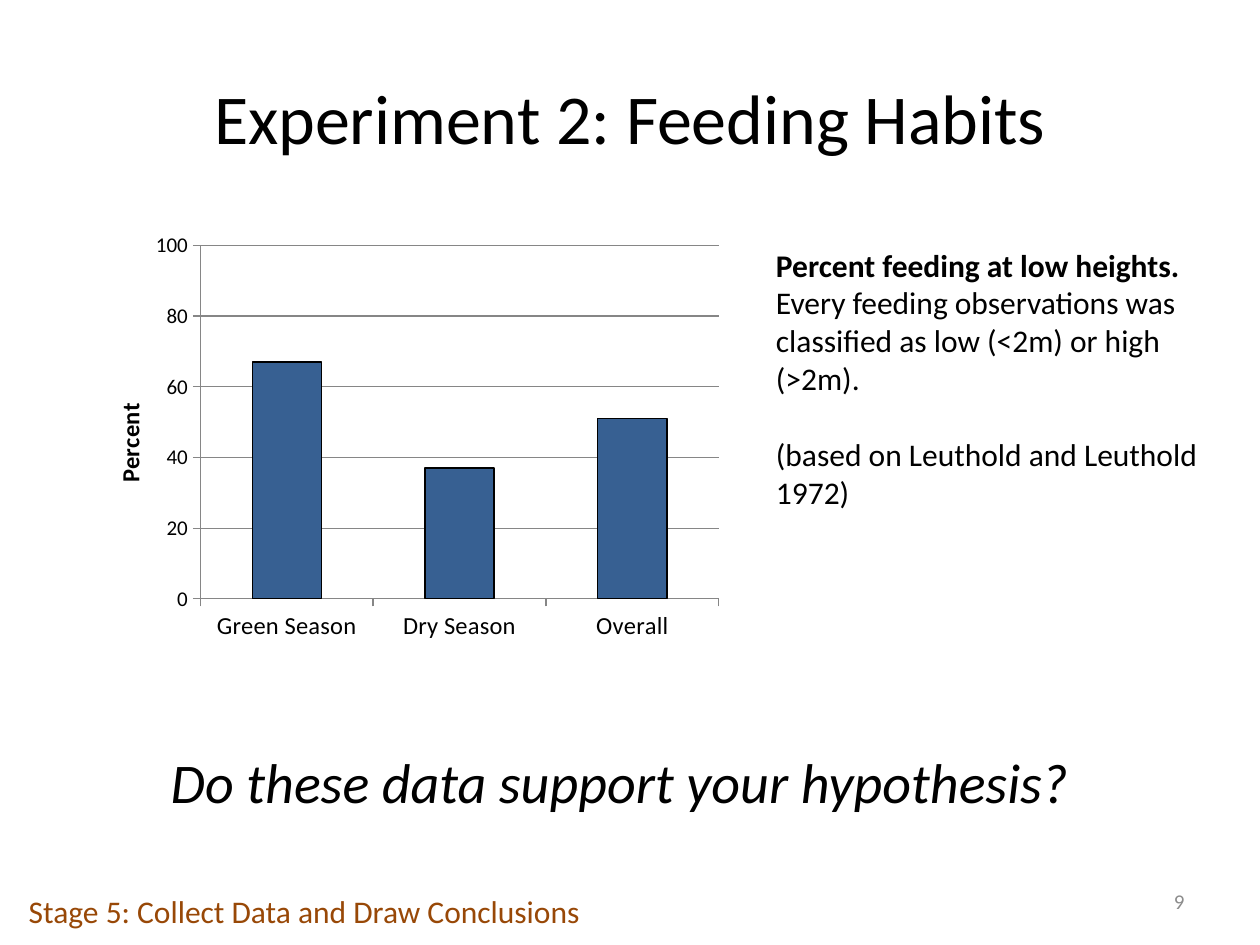
import pptx
import pptx.util
import pptx.dml.color
import pptx.enum.text
import pptx.enum.chart
import pptx.chart.data
import pptx.oxml
import pptx.oxml.ns

Inches = pptx.util.Inches
Pt = pptx.util.Pt
Color = pptx.dml.color.RGBColor
Align = pptx.enum.text.PP_ALIGN
Anchor = pptx.enum.text.MSO_ANCHOR

BLACK = Color(0x00, 0x00, 0x00)
BLUE = Color(0x37, 0x60, 0x92)
BROWN = Color(0x98, 0x48, 0x07)
GRAY = Color(0x8C, 0x8C, 0x8C)
RULE = Color(0x86, 0x86, 0x86)
FACE = "Calibri"


def set_font(font, size, color=BLACK, bold=False, italic=False):
    """Set the face, size, colour and style of a font."""
    font.name = FACE
    font.size = Pt(size)
    font.bold = bold
    font.italic = italic
    font.color.rgb = color


def add_text(slide, box, text, align=Align.LEFT, anchor=Anchor.TOP, gap=0, **style):
    """Place paragraphs of text in a box; a paragraph may be a list of (text, bold)."""
    frame = slide.shapes.add_textbox(*map(Inches, box)).text_frame
    frame.word_wrap = True
    frame.vertical_anchor = anchor
    paras = [text] if isinstance(text, str) else text
    for num, runs in enumerate(paras):
        para = frame.add_paragraph() if num else frame.paragraphs[0]
        para.alignment = align
        if num:
            para.space_before = Pt(gap)
        for words, bold in [(runs, False)] if isinstance(runs, str) else runs:
            run = para.add_run()
            run.text = words
            set_font(run.font, bold=bold, **style)


def set_layout(node, index, **parts):
    """Give a chart part a manual layout in fractions of the chart."""
    for old in node.findall(pptx.oxml.ns.qn("c:layout")):
        node.remove(old)
    tags = "".join(f'<c:{tag} val="{val}"/>' for tag, val in parts.items())
    node.insert(index, pptx.oxml.parse_xml(
        f'<c:layout {pptx.oxml.ns.nsdecls("c")}>'
        f"<c:manualLayout>{tags}</c:manualLayout></c:layout>"))


def add_bars(slide, box):
    """Draw the column chart of low feeding by season."""
    data = pptx.chart.data.CategoryChartData()
    data.categories = ["Green Season", "Dry Season", "Overall"]
    data.add_series("Series 1", [67, 37, 51])
    kind = pptx.enum.chart.XL_CHART_TYPE.COLUMN_CLUSTERED
    chart = slide.shapes.add_chart(kind, *map(Inches, box), data).chart
    chart.has_legend = False
    chart.has_title = False
    set_font(chart.font, 10)

    plot = chart.plots[0]
    plot.gap_width = 150
    plot.vary_by_categories = False
    bars = plot.series[0].format
    bars.fill.solid()
    bars.fill.fore_color.rgb = BLUE
    bars.line.color.rgb = BLACK
    bars.line.width = Pt(0.75)

    value = chart.value_axis
    value.minimum_scale = 0
    value.maximum_scale = 100
    value.major_unit = 20
    value.has_major_gridlines = True
    for axis, size in ((chart.category_axis, 14), (value, 12)):
        set_font(axis.tick_labels.font, size)
        axis.major_tick_mark = pptx.enum.chart.XL_TICK_MARK.OUTSIDE
        axis.format.line.color.rgb = RULE
        axis.format.line.width = Pt(0.75)
    grid = value.major_gridlines.format.line
    grid.color.rgb = RULE
    grid.width = Pt(0.75)

    title = value.axis_title
    run = title.text_frame.paragraphs[0].add_run()
    run.text = "Percent"
    set_font(run.font, 14, bold=True)
    set_layout(title._element, 1, xMode="edge", yMode="edge", x=0.05, y=0.41)
    area = chart._chartSpace.chart.plotArea
    set_layout(area, 0, layoutTarget="inner", xMode="edge", yMode="edge",
               x=0.19, y=0.05, w=0.79, h=0.83)


def add_note(slide, box):
    """Explain the measure beside the chart."""
    add_text(slide, box, [
        [("Percent feeding at low heights.", True),
         (" Every feeding observations was classified as low (<2m) or high (>2m).", False)],
        "(based on Leuthold and Leuthold 1972)",
    ], gap=22, size=18)


def add_foot(slide, box):
    """Place the stage name at the left and the slide number at the right."""
    left, top, width, height = box
    add_text(slide, (left, top + 0.08, 5.93, height),
             "Stage 5: Collect Data and Draw Conclusions", size=18, color=BROWN)
    add_text(slide, (left + width - 2.33, top, 2.33, height), "9",
             align=Align.RIGHT, anchor=Anchor.MIDDLE, size=12, color=GRAY)


def main():
    """Build the slide and save it."""
    deck = pptx.Presentation()
    deck.slide_width = Inches(10)
    deck.slide_height = Inches(7.5)
    slide = deck.slides.add_slide(deck.slide_layouts[6])
    add_bars(slide, (0.6, 1.78, 5.21, 3.38))
    add_note(slide, (6.06, 1.9, 3.62, 2.22))
    add_text(slide, (0.6, 5.88, 8.64, 0.64), "Do these data support your hypothesis?",
             align=Align.CENTER, size=32, italic=True)
    add_foot(slide, (0.13, 6.95, 9.37, 0.4))
    add_text(slide, (0.5, 0.3, 9, 1.25), "Experiment 2: Feeding Habits",
             align=Align.CENTER, anchor=Anchor.MIDDLE, size=40)
    deck.save("out.pptx")


if __name__ == "__main__":
    main()
